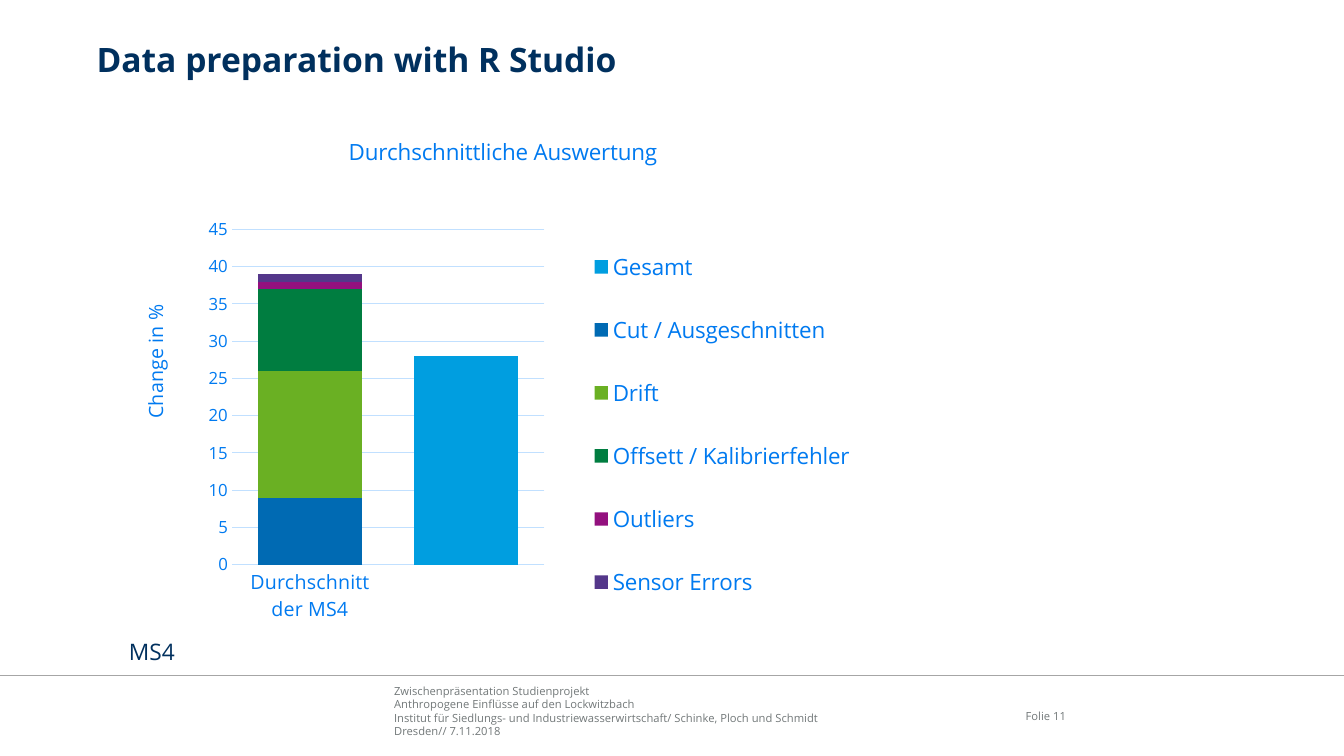
from lxml import etree
from pptx import Presentation
from pptx.chart.data import CategoryChartData
from pptx.dml.color import RGBColor
from pptx.enum.chart import XL_CHART_TYPE, XL_LEGEND_POSITION, XL_TICK_MARK
from pptx.enum.shapes import MSO_CONNECTOR
from pptx.enum.text import MSO_ANCHOR, PP_ALIGN
from pptx.oxml import parse_xml
from pptx.oxml.ns import nsdecls, qn
from pptx.util import Pt

STACKED = XL_CHART_TYPE.COLUMN_STACKED
BOTTOM = XL_LEGEND_POSITION.BOTTOM
NO_TICK = XL_TICK_MARK.NONE
STRAIGHT = MSO_CONNECTOR.STRAIGHT
ANCHOR_TOP, ANCHOR_MIDDLE, ANCHOR_BOTTOM = MSO_ANCHOR.TOP, MSO_ANCHOR.MIDDLE, MSO_ANCHOR.BOTTOM
LEFT, RIGHT = PP_ALIGN.LEFT, PP_ALIGN.RIGHT

FONT = "Open Sans"
NAVY, BLUE, PALE_BLUE = "00305E", "007AF0", "C1E0FF"
GRAY, RULE_GRAY = "727879", "A6A6A6"

FOOTER = """Zwischenpräsentation Studienprojekt
Anthropogene Einflüsse auf den Lockwitzbach
Institut für Siedlungs- und Industriewasserwirtschaft/ Schinke, Ploch und Schmidt
Dresden// 7.11.2018"""

CATEGORIES = ["Durchschnitt der MS4", ""]
SERIES = [
    ("Gesamt", (0, 28), "009EE0"),
    ("Cut / Ausgeschnitten", (9, 0), "006AB3"),
    ("Drift", (17, 0), "6AB023"),
    ("Offsett / Kalibrierfehler", (11, 0), "007D40"),
    ("Outliers", (1, 0), "93107E"),
    ("Sensor Errors", (1, 0), "54378A"),
]


def color(hex_value):
    return RGBColor.from_string(hex_value)


def format_font(font, size, hex_value, bold=False):
    font.name, font.size, font.bold = FONT, Pt(size), bold
    font.color.rgb = color(hex_value)


def format_line(line, hex_value, width):
    line.color.rgb = color(hex_value)
    line.width = Pt(width)


def add_text(page, text, left, top, width, height, *, size, hex_value,
             bold=False, align=LEFT, anchor=ANCHOR_TOP, inset=(0, 0)):
    box = page.shapes.add_textbox(Pt(left), Pt(top), Pt(width), Pt(height))
    frame = box.text_frame
    frame.word_wrap = True
    frame.vertical_anchor = anchor
    frame.margin_left = frame.margin_right = Pt(inset[0])
    frame.margin_top = frame.margin_bottom = Pt(inset[1])
    frame.text = text
    for para in frame.paragraphs:
        para.alignment = align
        format_font(para.font, size, hex_value, bold)


def add_rule(page, top, width):
    rule = page.shapes.add_connector(STRAIGHT, 0, Pt(top), width, Pt(top))
    format_line(rule.line, RULE_GRAY, 1)
    etree.SubElement(rule.element.spPr, qn("a:effectLst"))


def place(element, index, x, y, width=None, height=None, inner=False):
    """Fix a chart part at fractions of the chart; index is the layout's rank."""
    for old in element.findall(qn("c:layout")):
        element.remove(old)
    values = [("layoutTarget", "inner")] if inner else []
    values += [("xMode", "edge"), ("yMode", "edge"), ("x", x), ("y", y)]
    if width is not None:
        values += [("w", width), ("h", height)]
    layout = parse_xml(f"<c:layout {nsdecls('c')}><c:manualLayout/></c:layout>")
    for tag, value in values:
        etree.SubElement(layout[0], qn(f"c:{tag}")).set("val", str(value))
    element.insert(index, layout)


def set_title(title, text, size, x, y):
    title.text_frame.text = text
    format_font(title.text_frame.paragraphs[0].runs[0].font, size, BLUE)
    place(title._element, 1, x, y)


def format_axis(axis, size):
    axis.major_tick_mark = axis.minor_tick_mark = NO_TICK
    format_font(axis.tick_labels.font, size, BLUE)


def add_evaluation_chart(page, left, top, width, height):
    data = CategoryChartData()
    data.categories = CATEGORIES
    for name, values, _ in SERIES:
        data.add_series(name, values)
    chart = page.shapes.add_chart(
        STACKED, Pt(left), Pt(top), Pt(width), Pt(height), data).chart
    format_font(chart.font, 10, NAVY)
    set_title(chart.chart_title, "Durchschnittliche Auswertung", 16, 0.26, 0.03)

    plot = chart.plots[0]
    plot.gap_width, plot.overlap, plot.vary_by_categories = 50, 100, False
    for series, (_, _, hex_value) in zip(plot.series, SERIES):
        series.format.fill.solid()
        series.format.fill.fore_color.rgb = color(hex_value)
    place(chart._chartSpace.find(".//" + qn("c:plotArea")), 0,
          0.13, 0.21, 0.36, 0.61, inner=True)

    format_axis(chart.category_axis, 14)
    format_line(chart.category_axis.format.line, PALE_BLUE, 0.75)

    value_axis = chart.value_axis
    format_axis(value_axis, 12)
    value_axis.minimum_scale, value_axis.maximum_scale, value_axis.major_unit = 0, 45, 5
    value_axis.format.line.fill.background()
    format_line(value_axis.major_gridlines.format.line, PALE_BLUE, 0.75)
    set_title(value_axis.axis_title, "Change in %", 14, 0.02, 0.34)
    body = value_axis.axis_title.text_frame._txBody.find(qn("a:bodyPr"))
    body.set("rot", "-5400000")
    body.set("vert", "horz")

    chart.has_legend = True
    legend = chart.legend
    legend.position = BOTTOM
    legend.include_in_layout = False
    format_font(legend.font, 16, BLUE)
    place(legend._element, 1, 0.54, 0.19, 0.31, 0.75)


def main():
    deck = Presentation()
    deck.slide_width, deck.slide_height = Pt(960), Pt(540)
    page = deck.slides.add_slide(deck.slide_layouts[6])
    add_text(page, FOOTER, 281.5, 488, 408, 39, size=8, hex_value=GRAY, anchor=ANCHOR_BOTTOM)
    add_rule(page, 482.4, deck.slide_width)
    add_text(page, "Folie 11", 706, 497, 55.5, 29, size=8, hex_value=GRAY,
             align=RIGHT, anchor=ANCHOR_MIDDLE)
    add_text(page, "Data preparation with R Studio", 69, 27.5, 833, 54,
             size=24, hex_value=NAVY, bold=True)
    add_text(page, "MS4", 85, 452, 143, 27, size=16.2, hex_value=NAVY, inset=(7.2, 3.6))
    add_evaluation_chart(page, 85, 81.5, 620, 392.5)
    deck.save("out.pptx")


if __name__ == "__main__":
    main()
